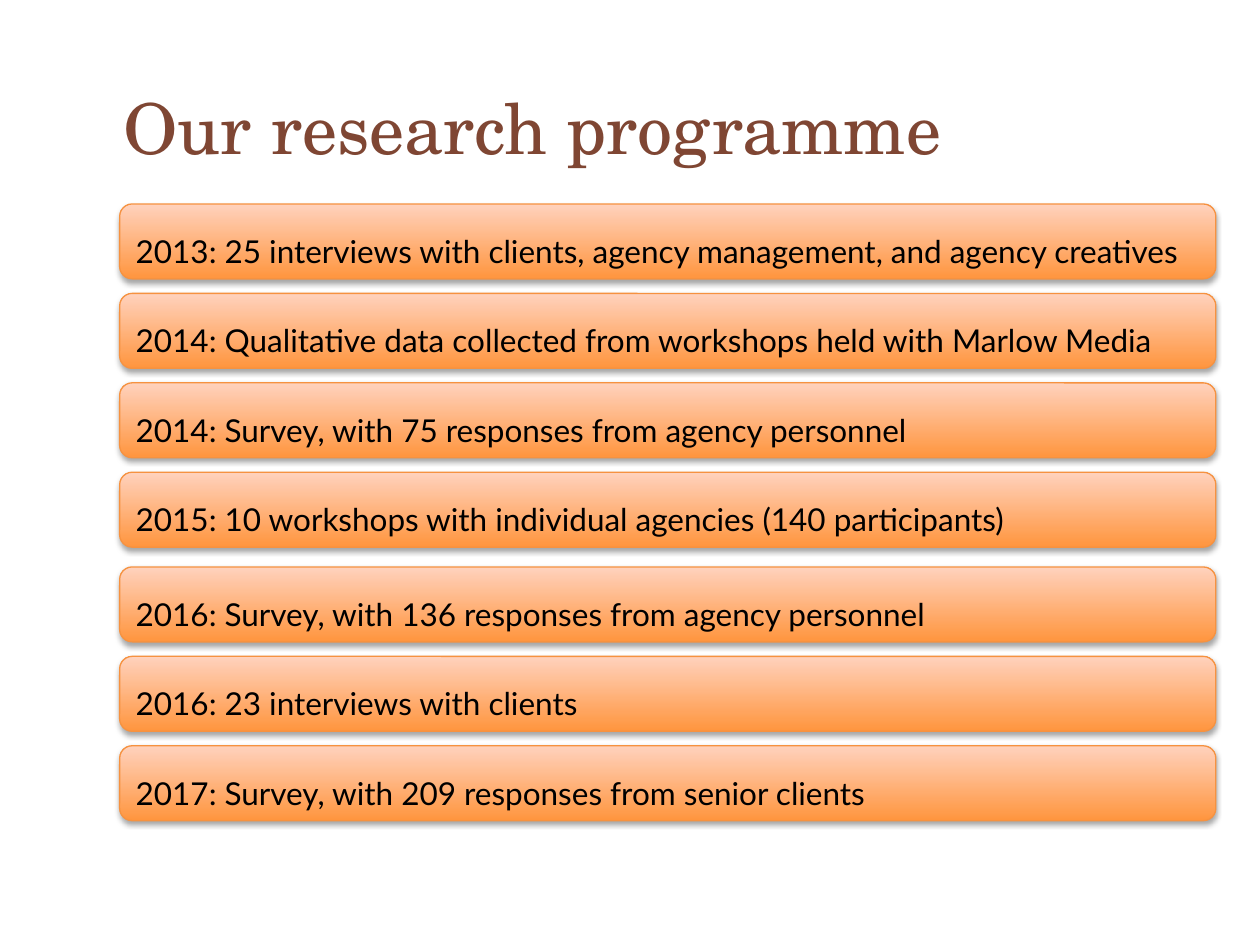
import dataclasses

import lxml.etree
import pptx
import pptx.dml.color
import pptx.enum.shapes
import pptx.enum.text
import pptx.oxml.ns
import pptx.util

Pt = pptx.util.Pt


@dataclasses.dataclass(frozen=True)
class Theme:
    title_font: str = "TeX Gyre Schola"
    body_font: str = "Lato"
    title_size: float = 40
    body_size: float = 18
    title: str = "7F4633"
    text: str = "000000"
    bar_bottom: str = "FF953E"
    bar_top: str = "FFD2BD"
    bar_line: str = "F69240"
    shadow: str = "000000"


THEME = Theme()
BAR_LEFT, BAR_WIDTH, BAR_HEIGHT, BAR_PITCH = 68.4, 626.4, 42.8, 51.1
STAGE_GROUPS = [
    (116.6, [
        "2013: 25 interviews with clients, agency management, and agency creatives",
        "2014: Qualitative data collected from workshops held with Marlow Media",
        "2014: Survey, with 75 responses from agency personnel",
        "2015: 10 workshops with individual agencies (140 participants)",
    ]),
    (324, [
        "2016: Survey, with 136 responses from agency personnel",
        "2016: 23 interviews with clients",
        "2017: Survey, with 209 responses from senior clients",
    ]),
]


def rgb(value):
    return pptx.dml.color.RGBColor.from_string(value)


def write_text(box, text, *, font, size, color, spacing, anchor):
    frame = box.text_frame
    frame.word_wrap = True
    frame.auto_size = pptx.enum.text.MSO_AUTO_SIZE.NONE
    frame.vertical_anchor = anchor
    para = frame.paragraphs[0]
    para.alignment = pptx.enum.text.PP_ALIGN.LEFT
    para.line_spacing = spacing
    para.space_before = Pt(0)
    span = para.add_run()
    span.text = text
    span.font.name = font
    span.font.size = Pt(size)
    span.font.color.rgb = rgb(color)


def add_title(page, text):
    box = page.shapes.title
    box.left, box.top, box.width, box.height = Pt(70.6), Pt(54), Pt(513.4), Pt(51)
    frame = box.text_frame
    frame.margin_left = frame.margin_right = frame.margin_top = frame.margin_bottom = 0
    write_text(box, text, font=THEME.title_font, size=THEME.title_size,
               color=THEME.title, spacing=Pt(42),
               anchor=pptx.enum.text.MSO_ANCHOR.TOP)


def add_shadow(box):
    box.shadow.inherit = False
    qn = pptx.oxml.ns.qn
    effects = box.element.spPr.find(qn("a:effectLst"))
    shadow = lxml.etree.SubElement(
        effects, qn("a:outerShdw"), blurRad=str(Pt(3.1)), dist=str(Pt(1.8)),
        dir="5400000", rotWithShape="0")
    color = lxml.etree.SubElement(shadow, qn("a:srgbClr"), val=THEME.shadow)
    lxml.etree.SubElement(color, qn("a:alpha"), val="35000")


def add_stage_bar(page, top, text):
    box = page.shapes.add_shape(
        pptx.enum.shapes.MSO_SHAPE.FLOWCHART_ALTERNATE_PROCESS,
        Pt(BAR_LEFT), Pt(top), Pt(BAR_WIDTH), Pt(BAR_HEIGHT))
    box.fill.gradient()
    box.fill.gradient_angle = 90
    for stop, color in zip(box.fill.gradient_stops, (THEME.bar_bottom, THEME.bar_top)):
        stop.color.rgb = rgb(color)
    box.line.color.rgb = rgb(THEME.bar_line)
    box.line.width = Pt(0.75)
    add_shadow(box)
    write_text(box, text, font=THEME.body_font, size=THEME.body_size,
               color=THEME.text, spacing=1.5,
               anchor=pptx.enum.text.MSO_ANCHOR.MIDDLE)


def main():
    deck = pptx.Presentation()
    deck.slide_width, deck.slide_height = Pt(720), Pt(540)
    page = deck.slides.add_slide(deck.slide_layouts.get_by_name("Title Only"))
    add_title(page, "Our research programme")
    for top, stages in STAGE_GROUPS:
        for index, text in enumerate(stages):
            add_stage_bar(page, top + index * BAR_PITCH, text)
    deck.save("out.pptx")


if __name__ == "__main__":
    main()
